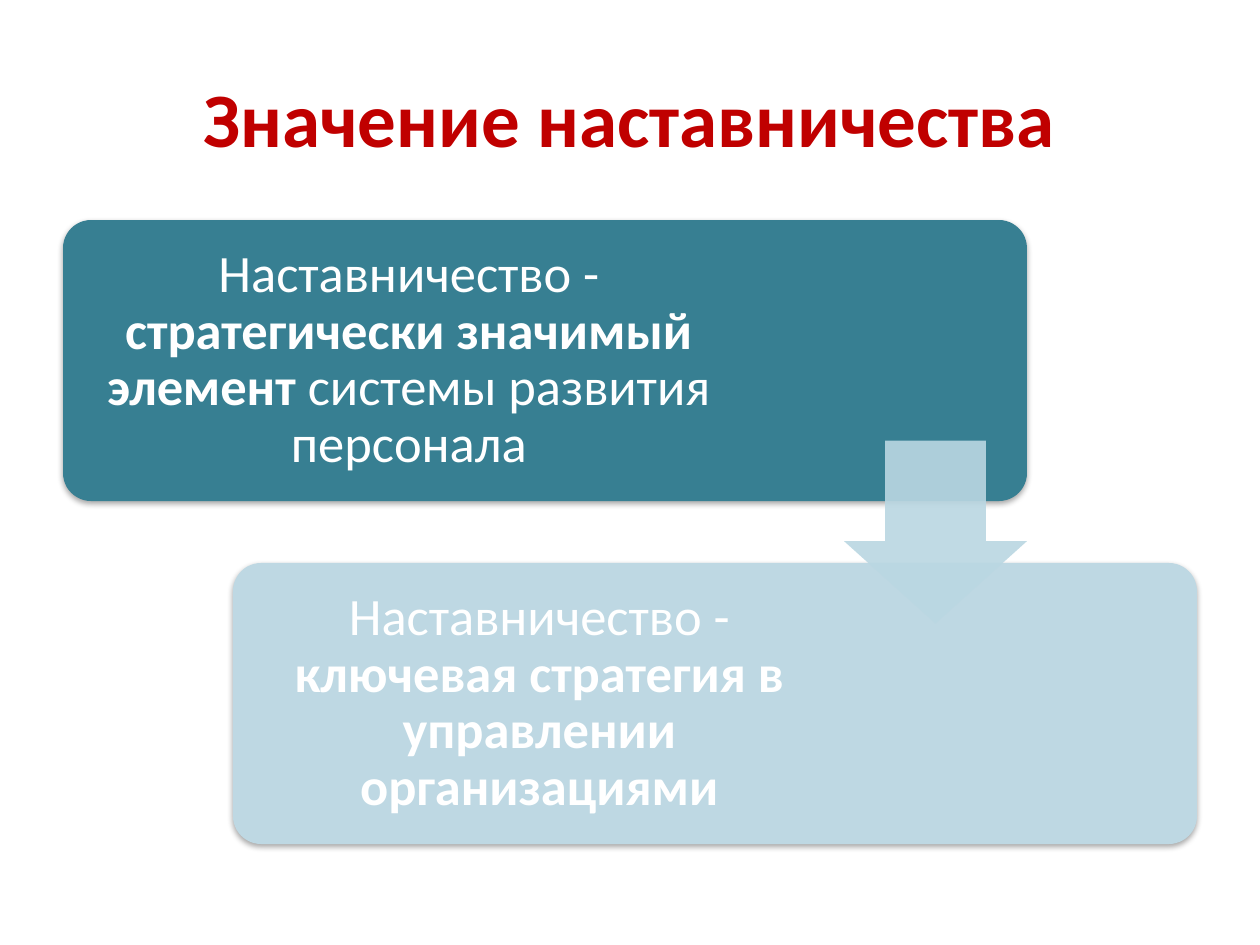
"""Build a slide on the value of mentoring: two cards joined by an arrow."""
from lxml.etree import SubElement
from pptx import Presentation
from pptx.dml.color import RGBColor
from pptx.enum.shapes import MSO_SHAPE as Shape
from pptx.enum.text import MSO_ANCHOR as Anchor, PP_ALIGN as Align
from pptx.oxml.ns import qn
from pptx.util import Emu, Pt

COLORS = {
    "title": "C00000",
    "text": "FFFFFF",
    "dark": "377F92",
    "light": "BED8E3",
    "arrow": "BAD7E2",
    "shadow": "000000",
}
FONT = "Calibri"
TITLE = "Значение наставничества"
CARDS = [
    ("dark", 674, [
        ("Наставничество - ", False),
        ("стратегически значимый элемент", True),
        (" системы развития персонала", False),
    ]),
    ("light", 595, [
        ("Наставничество - ", False),
        ("ключевая стратегия в управлении организациями", True),
    ]),
]
CARD_LEFT, CARD_TOP, CARD_WIDTH, CARD_HEIGHT = 63, 220, 964, 281
STEP_X, STEP_Y = 170, 343
INSET, MARGIN = 9, 15
ARROW_SIZE = 183


def px(*values):
    return [Emu(round(value * 914400 / 126)) for value in values]


def rgb(name):
    return RGBColor.from_string(COLORS[name])


def style_run(run, size, color, bold):
    font = run.font
    font.name, font.size, font.bold = FONT, Pt(size), bold
    font.color.rgb = rgb(color)


def add_filled(slide, preset, box, color, adjustments):
    shape = slide.shapes.add_shape(preset, *px(*box))
    shape.shadow.inherit = False
    shape.fill.solid()
    shape.fill.fore_color.rgb = rgb(color)
    shape.line.fill.background()
    for index, value in enumerate(adjustments):
        shape.adjustments[index] = value
    return shape


def set_alpha(color_element, percent):
    SubElement(color_element, qn("a:alpha"), val=str(percent * 1000))


def add_shadow(shape):
    effects = shape.element.spPr.find(qn("a:effectLst"))
    shadow = SubElement(effects, qn("a:outerShdw"), blurRad=str(Pt(3.1)),
                        dist=str(Pt(1.8)), dir="5400000", rotWithShape="0")
    color = SubElement(shadow, qn("a:srgbClr"), val=COLORS["shadow"])
    set_alpha(color, 35)


def add_card(slide, index, color, text_width, parts):
    left, top = CARD_LEFT + index * STEP_X, CARD_TOP + index * STEP_Y
    card = add_filled(slide, Shape.ROUNDED_RECTANGLE,
                      (left, top, CARD_WIDTH, CARD_HEIGHT), color, [0.1])
    add_shadow(card)
    box = (left + INSET, top + INSET, text_width, CARD_HEIGHT - 2 * INSET)
    frame = slide.shapes.add_textbox(*px(*box)).text_frame
    frame.word_wrap = True
    frame.vertical_anchor = Anchor.MIDDLE
    (frame.margin_left, frame.margin_top,
     frame.margin_right, frame.margin_bottom) = px(*[MARGIN] * 4)
    paragraph = frame.paragraphs[0]
    paragraph.alignment, paragraph.line_spacing = Align.CENTER, 0.9
    for text, bold in parts:
        run = paragraph.add_run()
        run.text = text
        style_run(run, 30, "text", bold)


def add_arrow(slide):
    left = CARD_LEFT + CARD_WIDTH - ARROW_SIZE
    middle = (CARD_TOP + CARD_HEIGHT + CARD_TOP + STEP_Y) / 2
    box = (left, middle - ARROW_SIZE / 2, ARROW_SIZE, ARROW_SIZE)
    arrow = add_filled(slide, Shape.DOWN_ARROW, box, "arrow", [0.55, 0.45])
    arrow.adjustments[0], arrow.adjustments[1] = 0.55, 0.45
    fill = arrow.element.spPr.find(qn("a:solidFill"))
    set_alpha(fill[0], 90)


def add_title(slide):
    title = slide.shapes.title
    title.left, title.top, title.width, title.height = px(63, 38, 1134, 157)
    frame = title.text_frame
    frame.text = TITLE
    frame.vertical_anchor = Anchor.MIDDLE
    paragraph = frame.paragraphs[0]
    paragraph.alignment = Align.CENTER
    style_run(paragraph.runs[0], 44, "title", True)


def main():
    presentation = Presentation()
    presentation.slide_width, presentation.slide_height = px(1260, 945)
    slide = presentation.slides.add_slide(presentation.slide_layouts[5])
    add_title(slide)
    for index, card in enumerate(CARDS):
        add_card(slide, index, *card)
    add_arrow(slide)
    presentation.save("out.pptx")


if __name__ == "__main__":
    main()
